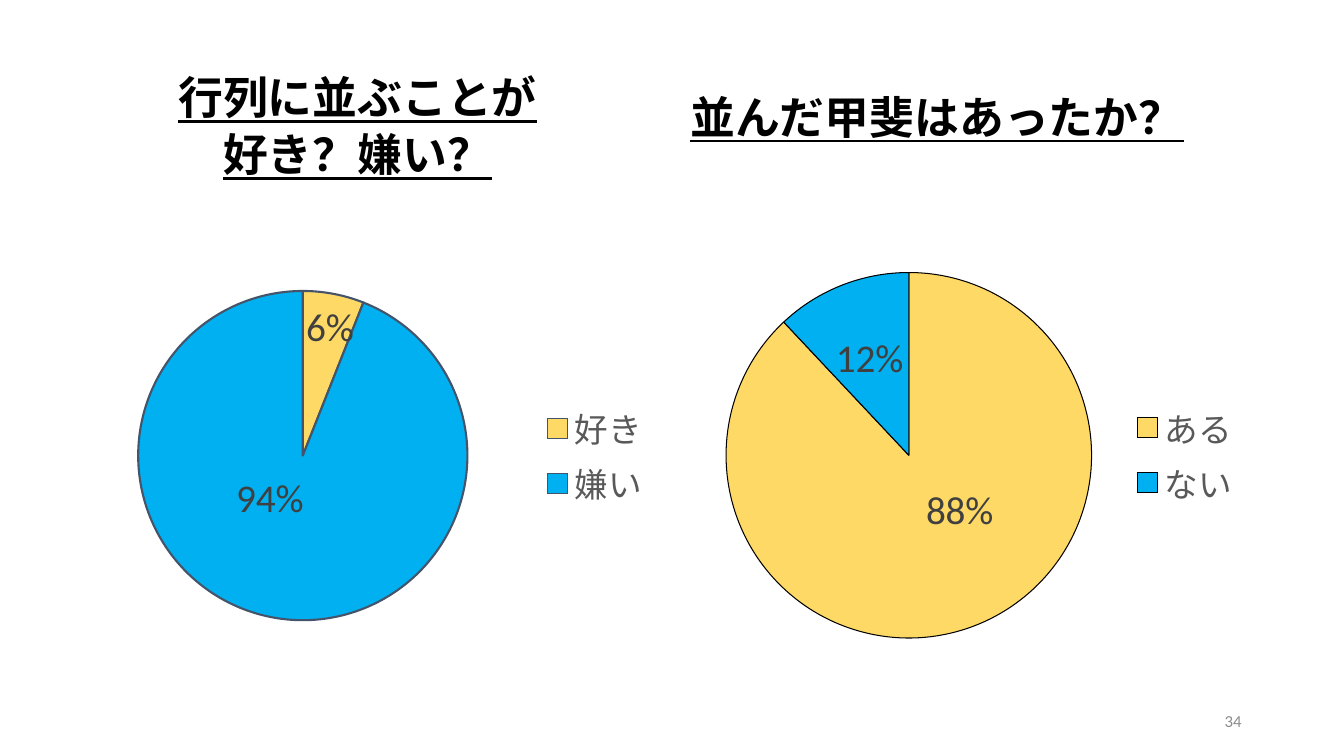
from dataclasses import dataclass

from lxml.etree import SubElement
from pptx import Presentation
from pptx.chart.data import CategoryChartData
from pptx.dml.color import RGBColor
from pptx.enum.chart import XL_CHART_TYPE, XL_LABEL_POSITION, XL_LEGEND_POSITION
from pptx.enum.text import MSO_ANCHOR, MSO_AUTO_SIZE, PP_ALIGN
from pptx.oxml.ns import qn
from pptx.util import Pt

FONT = "Calibri"
BLACK = RGBColor(0x00, 0x00, 0x00)
SLATE = RGBColor(0x44, 0x54, 0x6A)
DARK_GRAY = RGBColor(0x40, 0x40, 0x40)
MID_GRAY = RGBColor(0x59, 0x59, 0x59)
LIGHT_GRAY = RGBColor(0x8C, 0x8C, 0x8C)
YELLOW = RGBColor(0xFF, 0xD9, 0x66)
BLUE = RGBColor(0x00, 0xB0, 0xF0)
SLICE_COLORS = (YELLOW, BLUE)


@dataclass
class Heading:
    box: tuple[float, float, float, float]
    lines: tuple[str, ...]
    align: PP_ALIGN
    spacing: float


@dataclass
class Pie:
    box: tuple[float, float, float, float]
    cats: tuple[str, str]
    values: tuple[float, float]
    plot: tuple[float, float, float, float]
    label_shifts: tuple[tuple[float, float], ...]
    line: RGBColor
    line_width: float


HEADINGS = (
    Heading((52.5, 51, 406, 81.5), ("行列に並ぶことが", "好き？嫌い？"), PP_ALIGN.CENTER, 0.8),
    Heading((486, 51, 408, 55.5), ("並んだ甲斐はあったか？",), PP_ALIGN.LEFT, 0.9),
)
PIES = (
    Pie((52.5, 161.5, 420, 328), ("好き", "嫌い"), (0.06, 0.94),
        (0.11, 0.14, 0.56, 0.72), ((0.02, -0.1), (-0.03, -0.08)), SLATE, 1.5),
    Pie((486, 121.5, 408, 407.5), ("ある", "ない"), (0.88, 0.12),
        (0.08, 0.03, 0.64, 0.94), ((0.03, -0.05), (-0.01, -0.02)), BLACK, 0.75),
)


def style_font(font, size: float, color: RGBColor) -> None:
    font.name = FONT
    font.size = Pt(size)
    font.color.rgb = color


def write_heading(sp, h: Heading) -> None:
    sp.left, sp.top, sp.width, sp.height = map(Pt, h.box)
    tf = sp.text_frame
    tf.word_wrap = True
    tf.auto_size = MSO_AUTO_SIZE.NONE
    tf.vertical_anchor = MSO_ANCHOR.BOTTOM
    for i, line in enumerate(h.lines):
        p = tf.add_paragraph() if i else tf.paragraphs[0]
        p.alignment = h.align
        p.line_spacing = h.spacing
        p.space_before = Pt(10)
        r = p.add_run()
        r.text = line
        style_font(r.font, 32, BLACK)
        r.font.bold = True
        r.font.underline = True


def add_manual_layout(layout, **settings) -> None:
    manual = SubElement(layout, qn("c:manualLayout"))
    for tag, value in settings.items():
        SubElement(manual, qn(f"c:{tag}")).set("val", str(value))


def place_plot(chart, plot: tuple[float, float, float, float]) -> None:
    area = chart._chartSpace.find(".//" + qn("c:plotArea"))
    layout = area.find(qn("c:layout"))
    if layout is None:
        layout = SubElement(area, qn("c:layout"))
        area.insert(0, layout)
    x, y, w, h = plot
    add_manual_layout(layout, layoutTarget="inner", xMode="edge", yMode="edge", x=x, y=y, w=w, h=h)


def add_pie(s, pie: Pie) -> None:
    data = CategoryChartData(number_format="0%")
    data.categories = pie.cats
    data.add_series("Series 1", pie.values)
    chart = s.shapes.add_chart(XL_CHART_TYPE.PIE, *map(Pt, pie.box), data).chart
    chart.has_title = False
    style_font(chart.font, 10, BLACK)
    chart.has_legend = True
    chart.legend.position = XL_LEGEND_POSITION.RIGHT
    chart.legend.include_in_layout = False
    style_font(chart.legend.font, 24, MID_GRAY)
    place_plot(chart, pie.plot)

    plot = chart.plots[0]
    plot.vary_by_categories = True
    series = plot.series[0]
    series.format.line.color.rgb = pie.line
    series.format.line.width = Pt(pie.line_width)
    labels = series.data_labels
    labels.show_value = True
    labels.show_percentage = False
    labels.number_format = "0%"
    labels.number_format_is_linked = False
    labels.position = XL_LABEL_POSITION.CENTER
    style_font(labels.font, 28, DARK_GRAY)
    for i, (color, (x, y)) in enumerate(zip(SLICE_COLORS, pie.label_shifts)):
        point = series.points[i]
        point.format.fill.solid()
        point.format.fill.fore_color.rgb = color
        point.format.line.color.rgb = pie.line
        point.format.line.width = Pt(pie.line_width)
        style_font(point.data_label.font, 28, DARK_GRAY)
        point.data_label.position = XL_LABEL_POSITION.CENTER
        label = series._element.findall(".//" + qn("c:dLbl"))[i]
        layout = SubElement(label, qn("c:layout"))
        label.insert(1, layout)
        add_manual_layout(layout, x=x, y=y)


def add_page_number(s, number: str) -> None:
    tf = s.shapes.add_textbox(Pt(678), Pt(500.5), Pt(216), Pt(29)).text_frame
    tf.word_wrap = True
    tf.vertical_anchor = MSO_ANCHOR.MIDDLE
    p = tf.paragraphs[0]
    p.alignment = PP_ALIGN.RIGHT
    r = p.add_run()
    r.text = number
    style_font(r.font, 12, LIGHT_GRAY)


def main() -> None:
    prs = Presentation()
    prs.slide_width, prs.slide_height = Pt(960), Pt(540)
    s = prs.slides.add_slide(prs.slide_layouts[5])
    write_heading(s.shapes.title, HEADINGS[0])
    write_heading(s.shapes.add_textbox(*map(Pt, HEADINGS[1].box)), HEADINGS[1])
    add_page_number(s, "34")
    for pie in PIES:
        add_pie(s, pie)
    prs.save("out.pptx")


if __name__ == "__main__":
    main()
